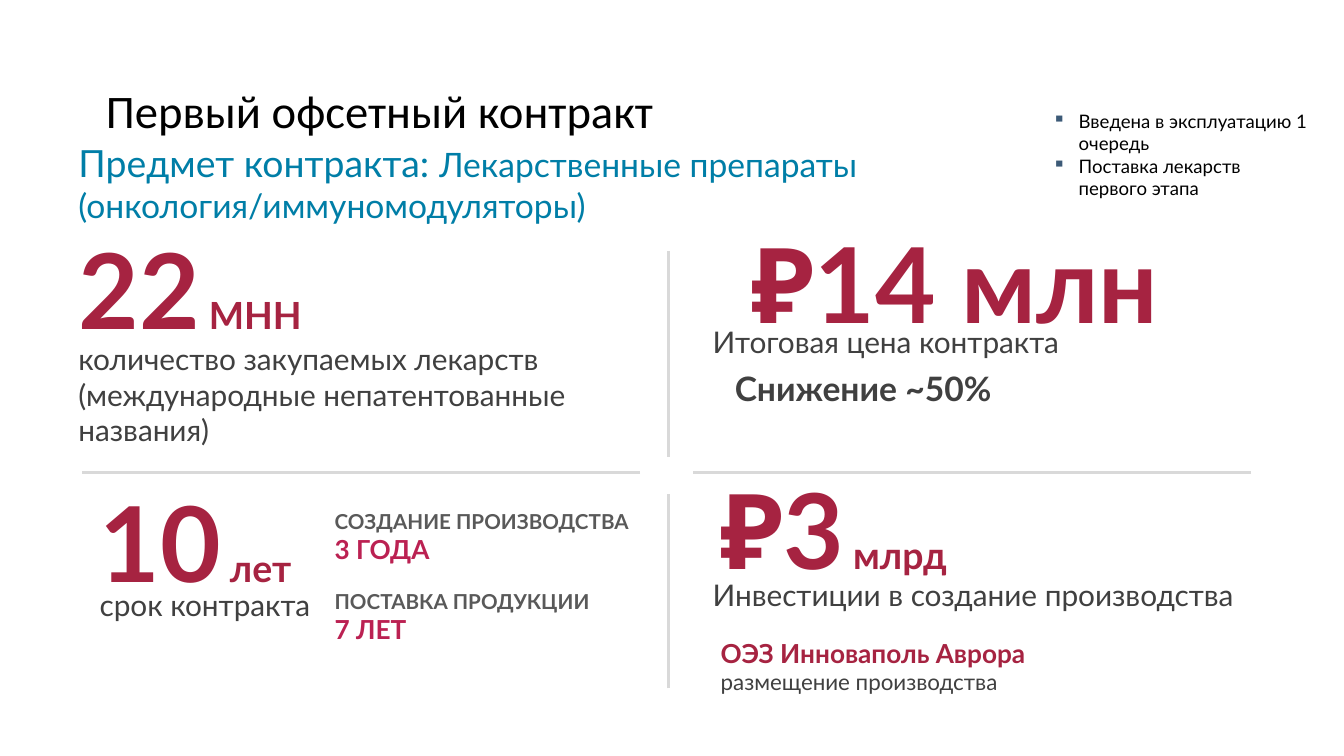
from lxml.etree import SubElement
from pptx import Presentation
from pptx.dml.color import RGBColor
from pptx.enum.shapes import MSO_CONNECTOR
from pptx.enum.text import MSO_ANCHOR
from pptx.oxml.ns import qn
from pptx.util import Inches, Pt

CRIMSON, PINK, BLUE = "A62341", "BB2152", "007EA7"
DARK, GREY, RULE, BLACK, BULLET = "404040", "595959", "D9D9D9", "000000", "3C5A77"


def rgb(value):
    return RGBColor.from_string(value)


def add_text(left, top, width, height, paragraphs, wrap=True):
    """Each paragraph is a list of runs: (text, size, colour, bold, font)."""
    frame = slide.shapes.add_textbox(
        Inches(left), Inches(top), Inches(width), Inches(height)).text_frame
    frame.word_wrap = wrap
    for index, runs in enumerate(paragraphs):
        paragraph = frame.add_paragraph() if index else frame.paragraphs[0]
        for text, size, color, bold, font in runs:
            run = paragraph.add_run()
            run.text = text
            run.font.size = Pt(size)
            run.font.bold = bold
            run.font.name = font
            run.font.color.rgb = rgb(color)
    return frame


prs = Presentation()
prs.slide_width, prs.slide_height = Inches(13.33), Inches(7.5)
slide = prs.slides.add_slide(prs.slide_layouts[6])

# Title and subject of the contract
title = add_text(0.92, 0.4, 11.5, 1.45,
                 [[("Первый офсетный контракт", 33.3, BLACK, False, "Calibri")]])
title.vertical_anchor = MSO_ANCHOR.MIDDLE
title.margin_left = title.margin_right = Inches(0.13)
title.margin_top = title.margin_bottom = Inches(0.07)
title.paragraphs[0].line_spacing = 0.9
add_text(0.68, 1.34, 12.18, 0.95, [[
    ("Предмет контракта: ", 26.7, BLUE, False, "Lato"),
    ("Лекарственные препараты (онкология/иммуномодуляторы)", 24, BLUE, False, "Lato")]])

# Dividers between the four quarters
for x1, y1, x2, y2 in [(6.35, 4.69, 0.81, 4.69), (12.41, 4.69, 6.87, 4.69),
                       (6.63, 4.53, 6.63, 2.49), (6.63, 6.83, 6.63, 4.9)]:
    divider = slide.shapes.add_connector(
        MSO_CONNECTOR.STRAIGHT, Inches(x1), Inches(y1), Inches(x2), Inches(y2))
    divider.line.color.rgb = rgb(RULE)
    divider.line.width = Pt(2.25)
    SubElement(divider._element.spPr, qn("a:effectLst"))

# Key figures: number, then unit
for left, top, width, number, unit, unit_size, number_font in [
        (0.68, 2.18, 3.15, "22", " МНН", 26.7, "Lato"),
        (7.36, 2.12, 4.66, "₽", "14 млн", 74.7, "Calibri"),
        (0.89, 4.69, 2.2, "10", " лет", 26.7, "Lato"),
        (7.05, 4.56, 5.29, "₽3", " млрд", 26.7, "Lato")]:
    add_text(left, top, width, 1.36, [[(number, 74.7, CRIMSON, True, number_font),
                                       (unit, unit_size, CRIMSON, True, "Lato")]])

# Captions under the figures
for left, top, width, height, caption in [
        (0.68, 3.33, 5.14, 1.18,
         "количество закупаемых лекарств (международные непатентованные названия)"),
        (6.97, 3.16, 3.92, 0.46, "Итоговая цена контракта"),
        (0.89, 5.77, 2.41, 0.46, "срок контракта"),
        (6.97, 5.67, 5.57, 0.46, "Инвестиции в создание производства")]:
    add_text(left, top, width, height, [[(caption, 21.3, DARK, False, "Lato")]])

# Price reduction
add_text(7.19, 3.6, 2.9, 0.5, [[("Снижение ~50%", 24, DARK, True, "Lato")]], wrap=False)

# Contract stages
for top, width, stage, term in [(5, 3.21, "СОЗДАНИЕ ПРОИЗВОДСТВА", "3 ГОДА"),
                                (5.79, 2.98, "ПОСТАВКА ПРОДУКЦИИ", "7 ЛЕТ")]:
    add_text(3.22, top, width, 0.66, [[(stage, 14.7, GREY, True, "Lato")],
                                      [(term, 18.7, PINK, True, "Lato")]])

# Production site
add_text(7.05, 6.27, 5.39, 0.68, [
    [("ОЭЗ Инноваполь Аврора", 18.7, CRIMSON, True, "Lato")],
    [("размещение производства", 16, DARK, False, "Lato")]])

# Progress so far
progress = add_text(10.34, 1.04, 2.79, 1, [
    [(step, 13.3, BLACK, False, "Lato")]
    for step in ("Введена в эксплуатацию 1 очередь", "Поставка лекарств первого этапа")])
for paragraph in progress.paragraphs:
    properties = paragraph._p.get_or_add_pPr()
    properties.set("marL", str(Inches(0.26)))
    properties.set("indent", str(-Inches(0.26)))
    bullet_color = SubElement(properties, qn("a:buClr"))
    SubElement(bullet_color, qn("a:srgbClr"), val=BULLET)
    SubElement(properties, qn("a:buChar"), char="▪")

prs.save("out.pptx")
